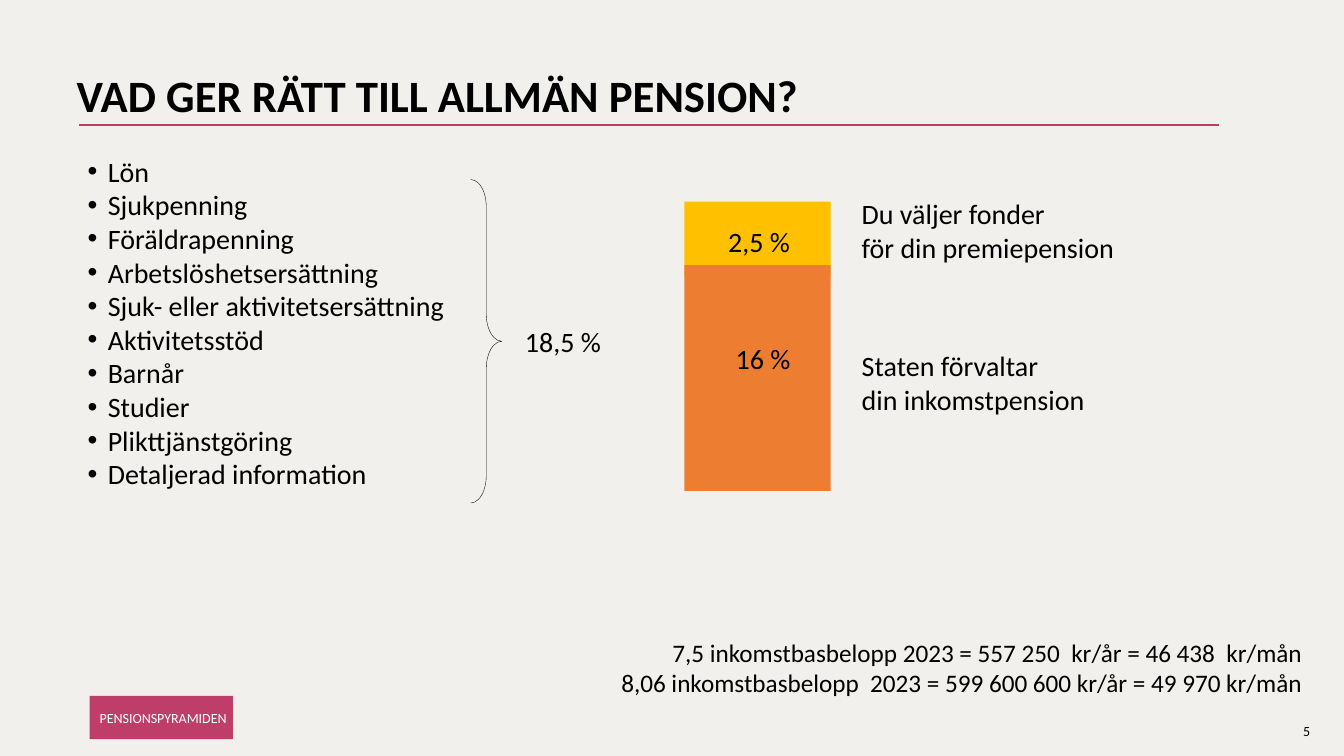
from pptx import Presentation
from pptx.dml.color import RGBColor as RGB
from pptx.enum.shapes import MSO_CONNECTOR, MSO_SHAPE
from pptx.enum.text import MSO_ANCHOR, MSO_AUTO_SIZE, PP_ALIGN
from pptx.oxml.ns import qn
from pptx.util import Pt
from lxml import etree

COLORS = {
    "background": "F1F0EC",
    "text": "000000",
    "accent": "BE3E69",
    "premium": "FFC000",
    "income": "ED7D31",
    "label": "FFFFFF",
}


def write(sp, lines, size, color="text", align=PP_ALIGN.LEFT, bold=False, bullet=False):
    tf = sp.text_frame
    tf.word_wrap = True
    tf.auto_size = MSO_AUTO_SIZE.NONE
    tf.vertical_anchor = MSO_ANCHOR.TOP
    tf.text = "\n".join(lines)
    for p in tf.paragraphs:
        p.alignment = align
        p.space_before = Pt(0)
        if bullet:
            pPr = p._p.get_or_add_pPr()
            pPr.set("marL", str(Pt(14.4)))
            pPr.set("indent", str(Pt(-14.4)))
            etree.SubElement(pPr, qn("a:buFont")).set("typeface", "Arial")
            etree.SubElement(pPr, qn("a:buChar")).set("char", "•")
        for r in p.runs:
            r.font.name = "Calibri"
            r.font.size = Pt(size)
            r.font.bold = bold
            r.font.color.rgb = RGB.from_string(COLORS[color])
    return tf


def block(x, y, w, h, color):
    sp = s.shapes.add_shape(MSO_SHAPE.RECTANGLE, Pt(x), Pt(y), Pt(w), Pt(h))
    sp.shadow.inherit = False
    sp.fill.solid()
    sp.fill.fore_color.rgb = RGB.from_string(COLORS[color])
    sp.line.fill.background()
    return sp


prs = Presentation()
prs.slide_width, prs.slide_height = Pt(960), Pt(540)
s = prs.slides.add_slide(prs.slide_layouts[1])
s.background.fill.solid()
s.background.fill.fore_color.rgb = RGB.from_string(COLORS["background"])

title = s.shapes.title
title.left, title.top, title.width, title.height = Pt(47.5), Pt(49), Pt(828), Pt(104.4)
tf = write(title, ["VAD GER RÄTT TILL ALLMÄN PENSION?"], 32, bold=True)
tf.paragraphs[0].line_spacing = 0.9

rule = s.shapes.add_connector(MSO_CONNECTOR.STRAIGHT, Pt(56.2), Pt(89.3), Pt(870.5), Pt(89.3))
rule.line.color.rgb = RGB.from_string(COLORS["accent"])
rule.line.width = Pt(1.5)
etree.SubElement(rule._element.spPr, qn("a:effectLst"))

sources = [
    "Lön",
    "Sjukpenning",
    "Föräldrapenning",
    "Arbetslöshetsersättning",
    "Sjuk- eller aktivitetsersättning",
    "Aktivitetsstöd",
    "Barnår",
    "Studier",
    "Plikttjänstgöring",
    "Detaljerad information",
]
body = s.placeholders[1]
body.left, body.top, body.width, body.height = Pt(55.4), Pt(106.6), Pt(280), Pt(252)
write(body, sources, 20, bullet=True)

brace = s.shapes.add_shape(MSO_SHAPE.RIGHT_BRACE, Pt(336.2), Pt(128.2), Pt(22.3), Pt(231.1))
brace.adjustments[0] = 0.872
brace.adjustments[1] = 0.5
brace.shadow.inherit = False
brace.fill.background()
brace.line.color.rgb = RGB.from_string(COLORS["text"])
brace.line.width = Pt(0.25)

block(488.9, 144, 104.4, 53.3, "premium")
block(488.9, 189.4, 104.4, 161.3, "income")

LEFT, CENTER, RIGHT = PP_ALIGN.LEFT, PP_ALIGN.CENTER, PP_ALIGN.RIGHT
texts = [
    (367.9, 228.2, 76.3, 31.7, 20, LEFT, ["18,5 %"]),
    (499.7, 157, 85, 31.7, 20, CENTER, ["2,5 %"]),
    (499.7, 240.5, 90.7, 31.7, 20, CENTER, ["16 %"]),
    (608.4, 136.8, 241.2, 55.4, 20, LEFT, ["Du väljer fonder", "för din premiepension"]),
    (608.4, 245.5, 241.2, 55.4, 20, LEFT, ["Staten förvaltar", "din inkomstpension"]),
    (434.9, 451.8, 502.6, 51.1, 18, RIGHT, [
        "7,5 inkomstbasbelopp 2023 = 557 250  kr/år = 46 438  kr/mån",
        "8,06 inkomstbasbelopp  2023 = 599 600 600 kr/år = 49 970 kr/mån",
    ]),
    (923.8, 512.6, 28.8, 19.4, 10, LEFT, ["5"]),
]
for x, y, w, h, size, align, lines in texts:
    box = s.shapes.add_textbox(Pt(x), Pt(y), Pt(w), Pt(h))
    write(box, lines, size, align=align)

tag = block(64.1, 497, 102.2, 31, "accent")
tf = write(tag, ["PENSIONSPYRAMIDEN"], 10, color="label")
tf.word_wrap = False
tf.vertical_anchor = MSO_ANCHOR.MIDDLE
tf.margin_left, tf.margin_right = Pt(7.2), Pt(2.9)

prs.save("out.pptx")
